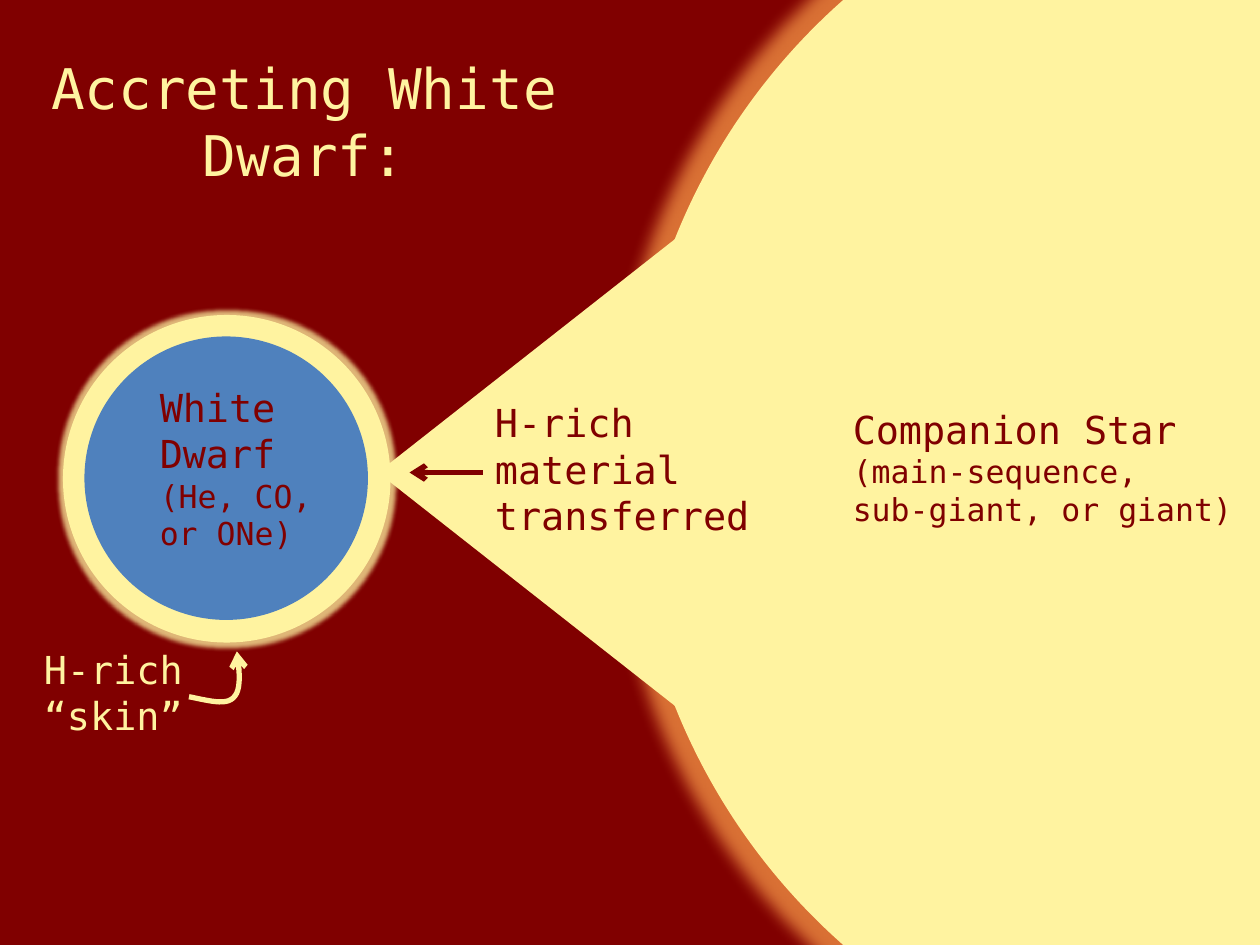
from dataclasses import dataclass
from typing import Any

from lxml.etree import SubElement
from pptx import Presentation
from pptx.dml.color import RGBColor
from pptx.enum.shapes import MSO_CONNECTOR, MSO_SHAPE
from pptx.enum.text import MSO_ANCHOR, MSO_AUTO_SIZE, PP_ALIGN
from pptx.oxml.ns import qn
from pptx.util import Inches, Pt


@dataclass(frozen=True)
class Theme:
    font: str = "DejaVu Sans Mono"
    dark: str = "800000"
    light: str = "FFF3A0"
    core: str = "4F81BD"
    halo: str = "F79646"
    title: int = 32
    label: int = 22
    detail: int = 18
    line: int = 3


def set_all(obj, values):
    for name, value in values.items():
        setattr(obj, name, value)


@dataclass
class Diagram:
    theme: Theme
    s: Any

    def background(self, color):
        fill = self.s.background.fill
        fill.solid()
        fill.fore_color.rgb = RGBColor.from_string(color)

    def paragraph(self, p, text, size, color, align=PP_ALIGN.LEFT):
        p.alignment = align
        p.text = text
        for r in p.runs:
            set_all(r.font, {"name": self.theme.font, "size": Pt(size)})
            r.font.color.rgb = RGBColor.from_string(color)

    def title(self, text, box):
        sp = self.s.shapes.title
        set_all(sp, dict(zip(("left", "top", "width", "height"), map(Inches, box))))
        tf = sp.text_frame
        set_all(tf, {"word_wrap": True, "vertical_anchor": MSO_ANCHOR.MIDDLE})
        self.paragraph(tf.paragraphs[0], text, self.theme.title, self.theme.light,
                       PP_ALIGN.CENTER)

    def shape(self, kind, box, color, rotation=0, glow=None):
        sp = self.s.shapes.add_shape(kind, *map(Inches, box))
        set_all(sp, {"rotation": rotation})
        sp.shadow.inherit = False
        sp.fill.solid()
        sp.fill.fore_color.rgb = RGBColor.from_string(color)
        sp.line.fill.background()
        if glow:
            glow_color, radius = glow
            effects = sp._element.spPr.find(qn("a:effectLst"))
            node = SubElement(effects, qn("a:glow"), rad=str(Pt(radius)))
            rgb = SubElement(node, qn("a:srgbClr"), val=glow_color)
            SubElement(rgb, qn("a:alpha"), val="75000")

    def label(self, box, color, text, detail=None):
        tf = self.s.shapes.add_textbox(*map(Inches, box)).text_frame
        set_all(tf, {"word_wrap": True, "auto_size": MSO_AUTO_SIZE.SHAPE_TO_FIT_TEXT})
        self.paragraph(tf.paragraphs[0], text, self.theme.label, color)
        if detail:
            self.paragraph(tf.add_paragraph(), detail, self.theme.detail, color)

    def arrow_style(self, sp, color):
        sp.line.color.rgb = RGBColor.from_string(color)
        sp.line.width = Pt(self.theme.line)
        spPr = sp._element.spPr
        SubElement(spPr.find(qn("a:ln")), qn("a:tailEnd"), type="arrow")
        if spPr.find(qn("a:effectLst")) is None:
            SubElement(spPr, qn("a:effectLst"))

    def arrow(self, start, end, color):
        ends = map(Inches, (*start, *end))
        self.arrow_style(self.s.shapes.add_connector(MSO_CONNECTOR.STRAIGHT, *ends), color)

    def curved_arrow(self, start, curves, color, steps=12):
        points, a = [], start
        for b, c, d in curves:
            for i in range(1, steps + 1):
                t = i / steps
                u = 1 - t
                weights = (u**3, 3 * u * u * t, 3 * u * t * t, t**3)
                points.append(tuple(
                    Inches(sum(w * v for w, v in zip(weights, axis)))
                    for axis in zip(a, b, c, d)))
            a = d
        builder = self.s.shapes.build_freeform(*map(Inches, start))
        builder.add_line_segments(points, close=False)
        sp = builder.convert_to_shape()
        sp.shadow.inherit = False
        sp.fill.background()
        self.arrow_style(sp, color)


prs = Presentation()
set_all(prs, {"slide_width": Inches(10), "slide_height": Inches(7.5)})
th = Theme()
d = Diagram(th, prs.slides.add_slide(prs.slide_layouts[5]))

d.background(th.dark)
d.title("Accreting White Dwarf:", (-0.17, 0.33, 5.17, 1.25))
d.shape(MSO_SHAPE.OVAL, (0.5, 2.5, 2.6, 2.6), th.light, glow=(th.light, 5))
d.shape(MSO_SHAPE.OVAL, (0.67, 2.67, 2.25, 2.25), th.core)
d.shape(MSO_SHAPE.OVAL, (5, -1.25, 10, 10), th.light, glow=(th.halo, 18))
d.shape(MSO_SHAPE.ISOSCELES_TRIANGLE, (2, 2, 5.5, 3.5), th.light, rotation=270)

d.label((6.67, 3.17, 3.5, 1.08), th.dark, "Companion Star",
        "(main-sequence,\vsub-giant, or giant)")
d.label((3.83, 3.12, 2.83, 1.21), th.dark, "H-rich material transferred")
d.arrow((3.83, 3.75), (3.25, 3.75), th.dark)
d.label((1.17, 3, 1.67, 1.45), th.dark, "White Dwarf", "(He, CO, or ONe)")
d.label((0.25, 5.08, 1.92, 0.84), th.light, "H-rich “skin”")
d.curved_arrow((1.5, 5.53), [
    ((1.65, 5.56), (1.79, 5.6), (1.85, 5.54)),
    ((1.92, 5.48), (1.9, 5.32), (1.88, 5.17)),
], th.light)

prs.save("out.pptx")
